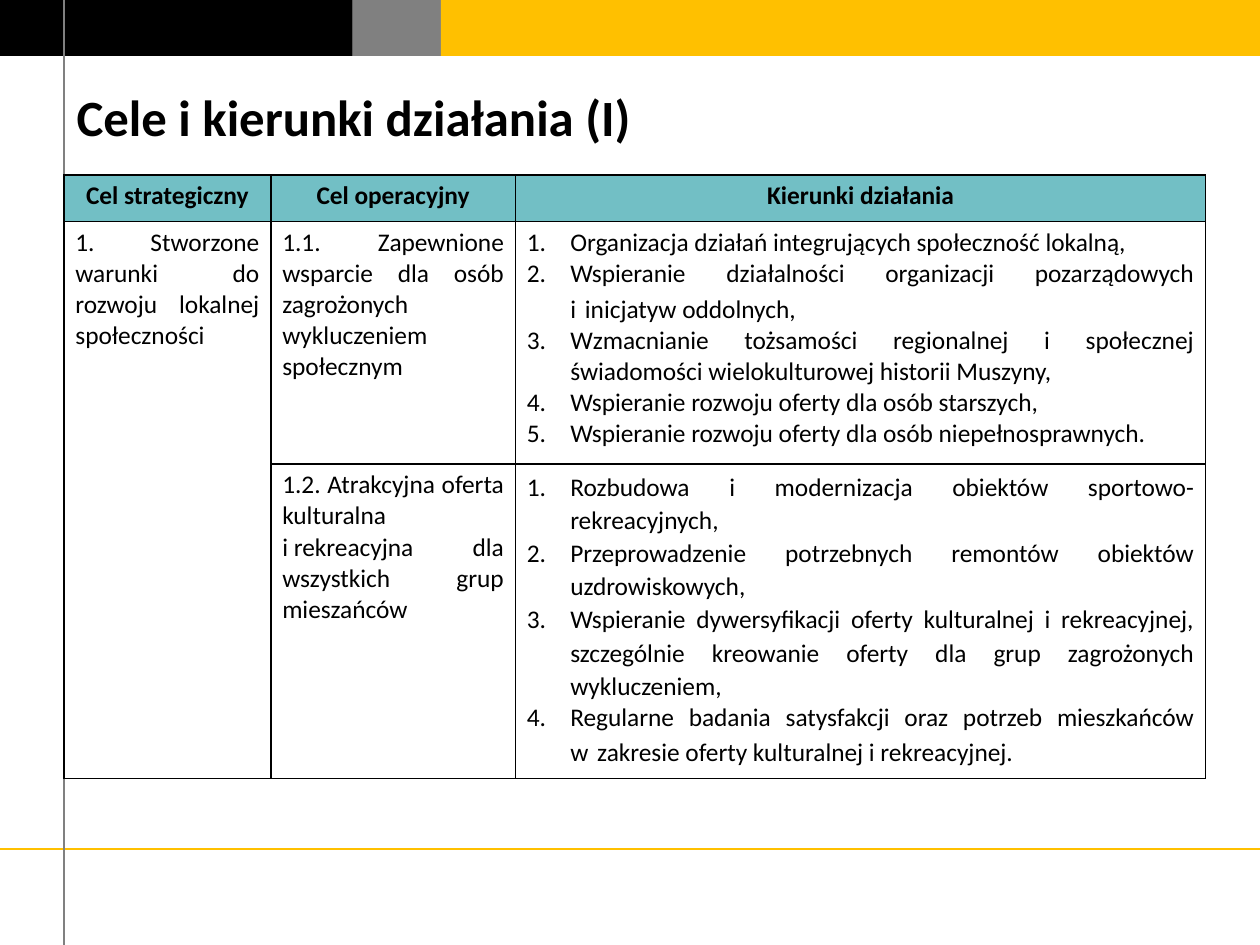
from collections import namedtuple
from dataclasses import dataclass

from lxml.etree import SubElement
from pptx import Presentation
from pptx.dml.color import RGBColor
from pptx.enum.shapes import MSO_CONNECTOR, MSO_SHAPE
from pptx.enum.text import MSO_ANCHOR, PP_ALIGN
from pptx.oxml.ns import qn
from pptx.util import Cm, Inches, Pt

Box = namedtuple("Box", "left top width height")
NO_BREAK = chr(160)


@dataclass(frozen=True)
class Theme:
    """Colours, fonts and type sizes of the slide."""
    black: str = "000000"
    grey: str = "808080"
    yellow: str = "FFC000"
    teal: str = "72BFC5"
    font: str = "Calibri"
    gap_font: str = "Arial"
    title_size: int = 32
    body_size: int = 16
    gap_size: int = 20
    rule_width: float = 0.75
    border_width: int = 1


THEME = Theme()
PAGE = Box(0, 0, Cm(28).inches, Cm(21).inches)
MARGIN = 0.56
FOOTER_HEIGHT = 0.84
BAND = Box(0, 0, PAGE.width, 0.49)
TITLE = Box(MARGIN, BAND.height, 9.99, 1.05)
GOALS = Box(MARGIN, 1.53, 9.99, 5.28)
COLUMNS = (1.81, 2.14, 6.04)
ROWS = (0.41, 2.12, 2.75)
HEADERS = ("Cel strategiczny", "Cel operacyjny", "Kierunki działania")
STRATEGIC_GOAL = "1. Stworzone warunki do rozwoju lokalnej społeczności"
OPERATIONAL_GOALS = (
    "1.1. Zapewnione wsparcie dla osób zagrożonych wykluczeniem społecznym",
    f"1.2. Atrakcyjna oferta kulturalna i{NO_BREAK}rekreacyjna dla wszystkich grup mieszańców",
)
DIRECTIONS = (
    (
        (("Organizacja działań integrujących społeczność lokalną,",), 1),
        (("Wspieranie działalności organizacji pozarządowych i", "inicjatyw oddolnych,"), 1),
        (("Wzmacnianie tożsamości regionalnej i społecznej świadomości "
          "wielokulturowej historii Muszyny,",), 1),
        (("Wspieranie rozwoju oferty dla osób starszych,",), 1),
        (("Wspieranie rozwoju oferty dla osób niepełnosprawnych.",), 1),
    ),
    (
        (("Rozbudowa i modernizacja obiektów sportowo-rekreacyjnych,",), 1.07),
        (("Przeprowadzenie potrzebnych remontów obiektów uzdrowiskowych,",), 1.07),
        (("Wspieranie dywersyfikacji oferty kulturalnej i rekreacyjnej, szczególnie "
          "kreowanie oferty dla grup zagrożonych wykluczeniem,",), 1.07),
        (("Regularne badania satysfakcji oraz potrzeb mieszkańców w",
          "zakresie oferty kulturalnej i rekreacyjnej."), 1),
    ),
)


def add_run(paragraph, text, size, font=THEME.font, bold=False):
    """Add a black run to a paragraph."""
    run = paragraph.add_run()
    run.text = text
    run.font.size = Pt(size)
    run.font.name = font
    run.font.bold = bold
    run.font.color.rgb = RGBColor.from_string(THEME.black)


def add_band(slide, box):
    """Draw the three-coloured band across the box."""
    left = box.left
    for share, color in ((0.28, THEME.black), (0.07, THEME.grey), (0.65, THEME.yellow)):
        width = box.width * share
        block = slide.shapes.add_shape(
            MSO_SHAPE.RECTANGLE, Inches(left), Inches(box.top), Inches(width), Inches(box.height))
        block.shadow.inherit = False
        block.fill.solid()
        block.fill.fore_color.rgb = RGBColor.from_string(color)
        block.line.fill.background()
        left += width


def add_rules(slide, box):
    """Draw the horizontal and vertical guide lines across the box."""
    right, bottom = box.left + box.width, box.top + box.height
    level = bottom - FOOTER_HEIGHT
    margin = box.left + MARGIN
    for ends, color in (((box.left, level, right, level), THEME.yellow),
                        ((margin, bottom, margin, box.top), THEME.grey)):
        rule = slide.shapes.add_connector(MSO_CONNECTOR.STRAIGHT, *map(Inches, ends))
        rule.line.color.rgb = RGBColor.from_string(color)
        rule.line.width = Pt(THEME.rule_width)
        SubElement(rule._element.spPr, qn("a:effectLst"))


def add_title(slide, box):
    """Place the slide title in the box."""
    frame = slide.shapes.add_textbox(*map(Inches, box)).text_frame
    frame.word_wrap = True
    frame.vertical_anchor = MSO_ANCHOR.MIDDLE
    frame.margin_left = frame.margin_right = Inches(0.11)
    frame.margin_top = frame.margin_bottom = Inches(0.06)
    paragraph = frame.paragraphs[0]
    paragraph.alignment = PP_ALIGN.JUSTIFY
    add_run(paragraph, "Cele i kierunki działania (I)", THEME.title_size, bold=True)


def style_cell(cell, color=None):
    """Give a cell its borders and its fill."""
    properties = cell._tc.get_or_add_tcPr()
    for side in ("a:lnL", "a:lnR", "a:lnT", "a:lnB"):
        border = SubElement(properties, qn(side), w=str(Pt(THEME.border_width)))
        SubElement(SubElement(border, qn("a:solidFill")), qn("a:srgbClr"), val=THEME.black)
    if color:
        cell.fill.solid()
        cell.fill.fore_color.rgb = RGBColor.from_string(color)
    else:
        cell.fill.background()


def write_cell(cell, text, alignment=PP_ALIGN.JUSTIFY, bold=False):
    """Write one paragraph into a cell."""
    paragraph = cell.text_frame.paragraphs[0]
    paragraph.alignment = alignment
    add_run(paragraph, text, THEME.body_size, bold=bold)


def write_directions(cell, directions):
    """Write a numbered list into a cell."""
    frame = cell.text_frame
    for index, (parts, spacing) in enumerate(directions):
        paragraph = frame.add_paragraph() if index else frame.paragraphs[0]
        paragraph.alignment = PP_ALIGN.JUSTIFY
        properties = paragraph._p.get_or_add_pPr()
        properties.set("marL", str(Inches(0.38)))
        properties.set("indent", str(-Inches(0.38)))
        SubElement(properties, qn("a:buFont"), typeface="+mj-lt")
        SubElement(properties, qn("a:buAutoNum"), type="arabicPeriod")
        if spacing != 1:
            paragraph.line_spacing = spacing
        for position, part in enumerate(parts):
            if position:
                add_run(paragraph, NO_BREAK, THEME.gap_size, THEME.gap_font)
            add_run(paragraph, part, THEME.body_size)


def add_goals_table(slide, box):
    """Build the table of goals and directions in the box."""
    table = slide.shapes.add_table(len(ROWS), len(COLUMNS), *map(Inches, box)).table
    table.first_row = table.horz_banding = False
    for column, width in zip(table.columns, COLUMNS):
        column.width = Inches(box.width * width / sum(COLUMNS))
    for row, height in zip(table.rows, ROWS):
        row.height = Inches(box.height * height / sum(ROWS))
    for row in range(len(ROWS)):
        for column in range(len(COLUMNS)):
            style_cell(table.cell(row, column), None if row else THEME.teal)
    for column, header in enumerate(HEADERS):
        write_cell(table.cell(0, column), header, PP_ALIGN.CENTER, bold=True)
    table.cell(1, 0).merge(table.cell(2, 0))
    write_cell(table.cell(1, 0), STRATEGIC_GOAL)
    for row, (goal, directions) in enumerate(zip(OPERATIONAL_GOALS, DIRECTIONS), start=1):
        write_cell(table.cell(row, 1), goal)
        write_directions(table.cell(row, 2), directions)


def main():
    """Build the slide and save it."""
    presentation = Presentation()
    presentation.slide_width = Inches(PAGE.width)
    presentation.slide_height = Inches(PAGE.height)
    slide = presentation.slides.add_slide(presentation.slide_layouts[6])
    add_band(slide, BAND)
    add_rules(slide, PAGE)
    add_title(slide, TITLE)
    add_goals_table(slide, GOALS)
    presentation.save("out.pptx")


if __name__ == "__main__":
    main()
